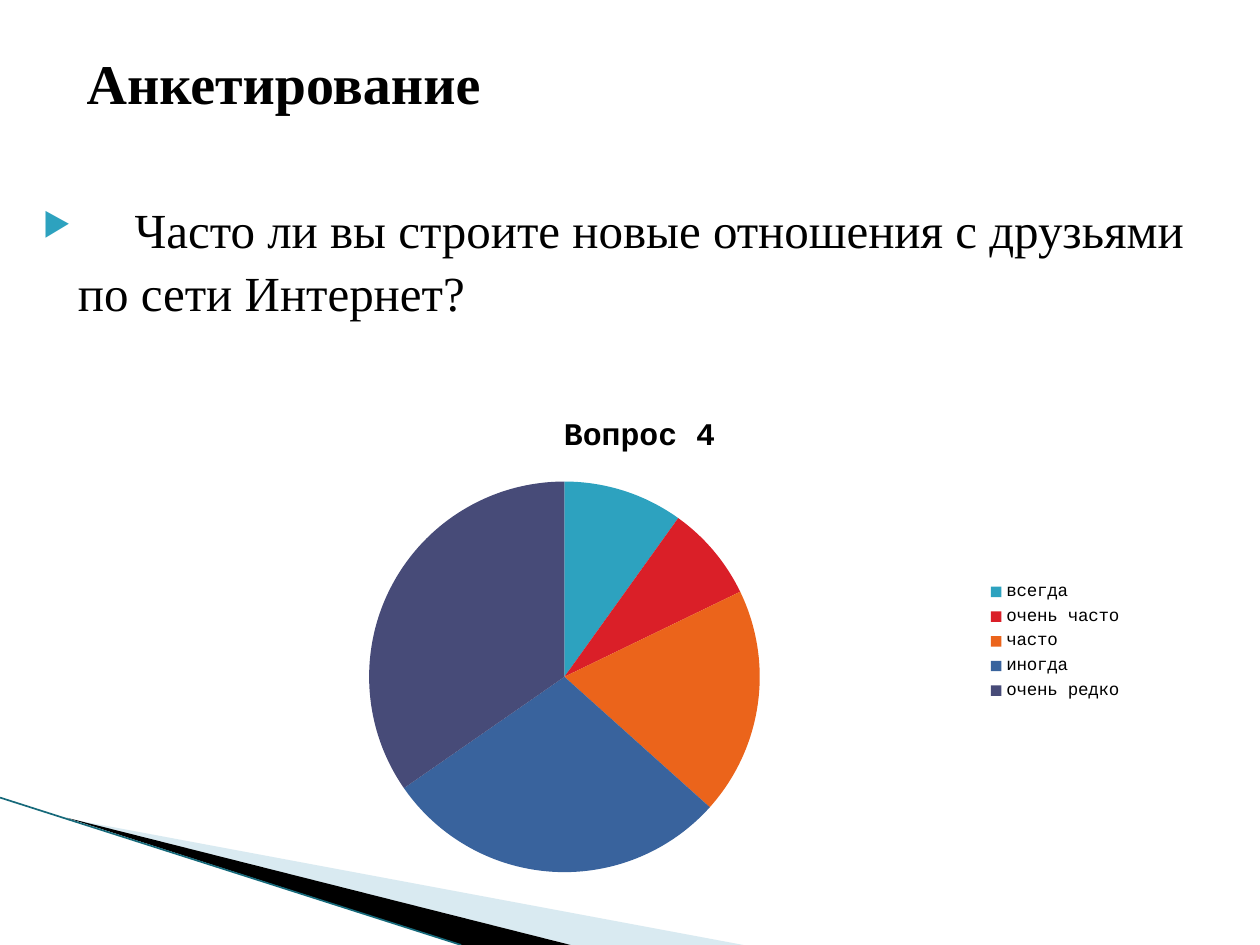
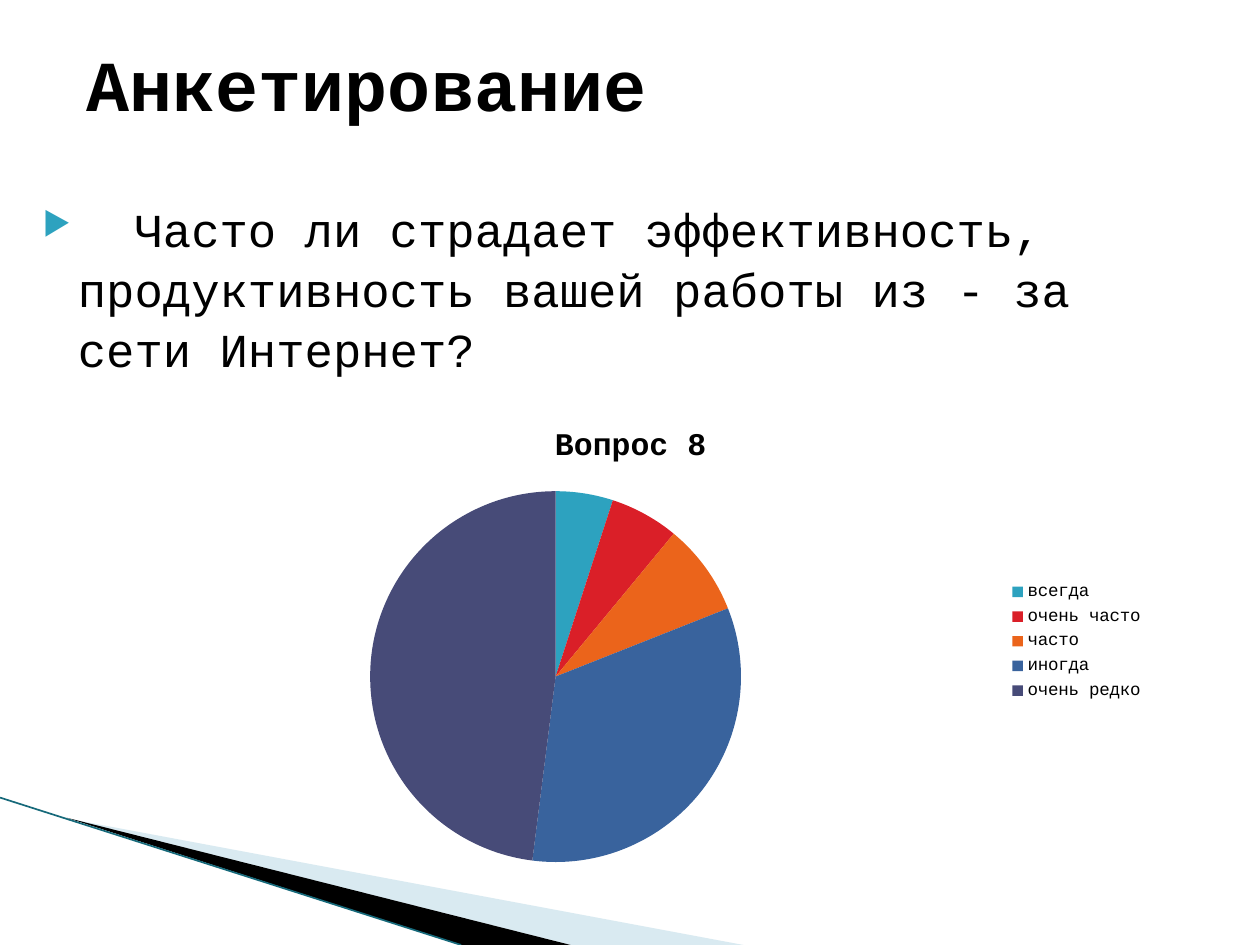
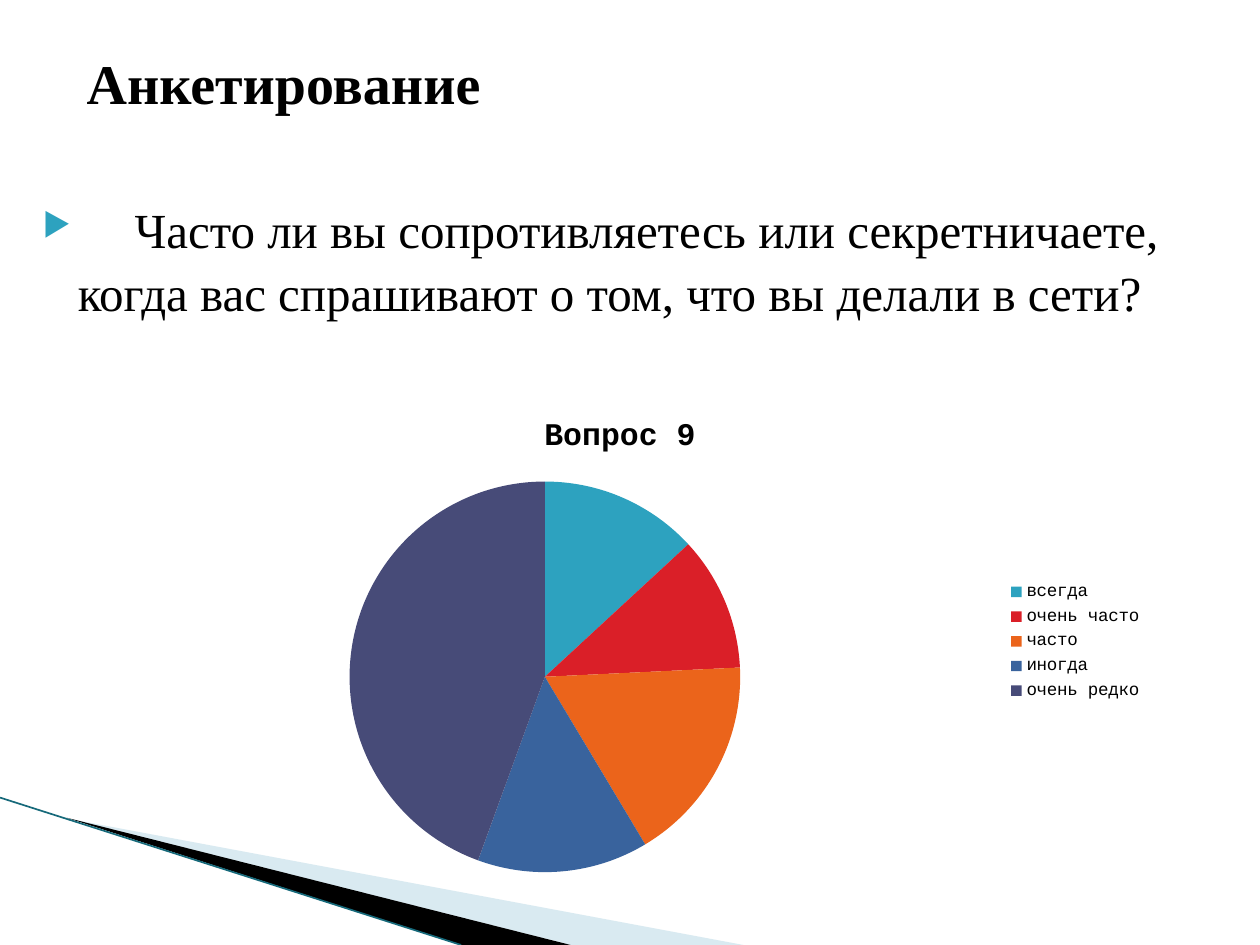
from dataclasses import dataclass

from lxml.etree import SubElement
from pptx import Presentation
from pptx.chart.data import CategoryChartData
from pptx.dml.color import RGBColor
from pptx.enum.chart import XL_CHART_TYPE, XL_LEGEND_POSITION
from pptx.enum.shapes import MSO_CONNECTOR
from pptx.enum.text import MSO_ANCHOR
from pptx.oxml.ns import qn
from pptx.util import Inches, Pt


@dataclass(frozen=True)
class Theme:
    """Colours, typefaces and type sizes shared by the survey slides."""

    ink: str = "000000"
    paper: str = "FFFFFF"
    accent: str = "2DA2BF"
    pale_wedge: str = "A0CBDC"
    edge: str = "16697A"
    slices: tuple = ("2DA2BF", "DA1F28", "EB641B", "39639D", "474B78")
    mono: str = "Courier New"
    serif: str = "Times New Roman"
    mono_title: float = 41
    serif_title: float = 32
    mono_body: float = 27
    serif_body: float = 28
    chart_title: float = 18
    chart_text: float = 10


@dataclass(frozen=True)
class Box:
    """A region of the page in inches."""

    left: float
    top: float
    width: float
    height: float

    def frame(self):
        """Return the region as four lengths."""
        return [Inches(side) for side in (self.left, self.top, self.width, self.height)]

    def point(self, across, down):
        """Return a place measured from the top left corner of the region."""
        return Inches(self.left + across), Inches(self.top + down)


@dataclass(frozen=True)
class Survey:
    """One survey question with its answers."""

    question: str
    chart_title: str
    shares: tuple
    chart_box: Box
    typeface: str
    title_size: float
    body_size: float


THEME = Theme()
PAGE = Box(0, 0, 10, 7.5)
TITLE = Box(0.59, 0.03, 8.17, 1.25)
BODY = Box(0.12, 1.51, 9.58, 1.6)
CORNER = Box(0, 6.33, 5.9, 1.17)
HEADING = "Анкетирование"
LEAD = "  "
ANSWERS = ("всегда", "очень часто", "часто", "иногда", "очень редко")
SURVEYS = (
    Survey("Часто ли вы строите новые отношения с друзьями по сети Интернет?",
           "Вопрос 4", (10, 8, 19, 29, 35), Box(1.14, 3.12, 7.87, 3.94),
           THEME.serif, THEME.serif_title, THEME.serif_body),
    Survey("Часто ли страдает эффективность, продуктивность вашей работы "
           "из - за сети Интернет?",
           "Вопрос 8", (5, 6, 8, 33, 48), Box(0.83, 3.2, 8.35, 3.78),
           THEME.mono, THEME.mono_title, THEME.mono_body),
    Survey("Часто ли вы сопротивляетесь или секретничаете, когда вас "
           "спрашивают о том, что вы делали в сети?",
           "Вопрос 9", (13, 11, 17, 14, 44), Box(0.67, 3.12, 8.5, 3.94),
           THEME.serif, THEME.serif_title, THEME.serif_body),
)


def apply_format(target, values):
    """Set every attribute named in the dict of format values."""
    for name, value in values.items():
        setattr(target, name, value)


def style_font(font, typeface, size, bold=False):
    """Give a font its typeface, size, weight and ink colour."""
    apply_format(font, {"name": typeface, "size": Pt(size), "bold": bold})
    font.color.rgb = RGBColor.from_string(THEME.ink)


def add_span(para, text, typeface, size, bold=False):
    """Add a styled run to a paragraph."""
    span = para.add_run()
    span.text = text
    style_font(span.font, typeface, size, bold)


def add_text_frame(page, box, anchor):
    """Add a wrapping text box and return its text frame."""
    frame = page.shapes.add_textbox(*box.frame()).text_frame
    apply_format(frame, {"word_wrap": True, "vertical_anchor": anchor})
    return frame


def add_wedge(page, box, corners, colour, opacity=100):
    """Draw one filled outline of the corner decoration."""
    start, *others = [box.point(*corner) for corner in corners]
    builder = page.shapes.build_freeform(*start)
    builder.add_line_segments(others, close=True)
    wedge = builder.convert_to_shape()
    wedge.shadow.inherit = False
    wedge.line.fill.background()
    wedge.fill.solid()
    wedge.fill.fore_color.rgb = RGBColor.from_string(colour)
    if opacity < 100:
        tint = wedge.fill._xPr.find(".//" + qn("a:srgbClr"))
        SubElement(tint, qn("a:alpha"), val=str(opacity * 1000))


def add_corner(page, box):
    """Draw the wedges and the edge line in the lower left corner."""
    floor = box.height
    add_wedge(page, box, ((0.55, 0.17), (5.9, floor), (4.53, floor)),
              THEME.pale_wedge, 40)
    add_wedge(page, box, ((0.53, 0.16), (4.53, floor), (3.66, floor)), THEME.ink)
    edge = page.shapes.add_connector(
        MSO_CONNECTOR.STRAIGHT, *box.point(0, 0), *box.point(3.66, floor))
    edge.line.color.rgb = RGBColor.from_string(THEME.edge)
    edge.line.width = Pt(0.95)
    SubElement(edge._element.spPr, qn("a:effectLst"))


def add_title(page, box, survey):
    """Write the slide heading."""
    para = add_text_frame(page, box, MSO_ANCHOR.MIDDLE).paragraphs[0]
    add_span(para, HEADING, survey.typeface, survey.title_size, bold=True)


def add_bullet(para):
    """Give a paragraph a hanging triangle bullet."""
    properties = para._p.get_or_add_pPr()
    properties.set("marL", str(Inches(0.4)))
    properties.set("indent", str(Inches(-0.28)))
    colour = SubElement(properties, qn("a:buClr"))
    SubElement(colour, qn("a:srgbClr"), val=THEME.accent)
    SubElement(properties, qn("a:buSzPct"), val="68000")
    SubElement(properties, qn("a:buChar"), char="▶")


def add_question(page, box, survey):
    """Write the bulleted survey question."""
    para = add_text_frame(page, box, MSO_ANCHOR.TOP).paragraphs[0]
    add_bullet(para)
    para.line_spacing = 1.06
    add_span(para, LEAD, THEME.mono, THEME.mono_body)
    add_span(para, survey.question, survey.typeface, survey.body_size)


def add_pie(page, box, survey):
    """Chart the answers as a pie with a legend on the right."""
    data = CategoryChartData()
    data.categories = ANSWERS
    data.add_series(survey.chart_title, survey.shares)
    chart = page.shapes.add_chart(XL_CHART_TYPE.PIE, *box.frame(), data).chart
    style_font(chart.font, THEME.mono, THEME.chart_text)
    apply_format(chart, {"has_title": True, "has_legend": True})
    apply_format(chart.legend, {"position": XL_LEGEND_POSITION.RIGHT,
                                "include_in_layout": False})
    add_span(chart.chart_title.text_frame.paragraphs[0], survey.chart_title,
             THEME.mono, THEME.chart_title, bold=True)
    plot = chart.plots[0]
    plot.vary_by_categories = True
    for index, colour in enumerate(THEME.slices):
        fill = plot.series[0].points[index].format.fill
        fill.solid()
        fill.fore_color.rgb = RGBColor.from_string(colour)


def add_survey_page(deck, survey):
    """Build one survey slide."""
    page = deck.slides.add_slide(deck.slide_layouts[6])
    page.background.fill.solid()
    page.background.fill.fore_color.rgb = RGBColor.from_string(THEME.paper)
    add_corner(page, CORNER)
    add_question(page, BODY, survey)
    add_title(page, TITLE, survey)
    add_pie(page, survey.chart_box, survey)


def main():
    """Build and save the deck."""
    deck = Presentation()
    apply_format(deck, {"slide_width": Inches(PAGE.width),
                        "slide_height": Inches(PAGE.height)})
    for survey in SURVEYS:
        add_survey_page(deck, survey)
    deck.save("out.pptx")


if __name__ == "__main__":
    main()
